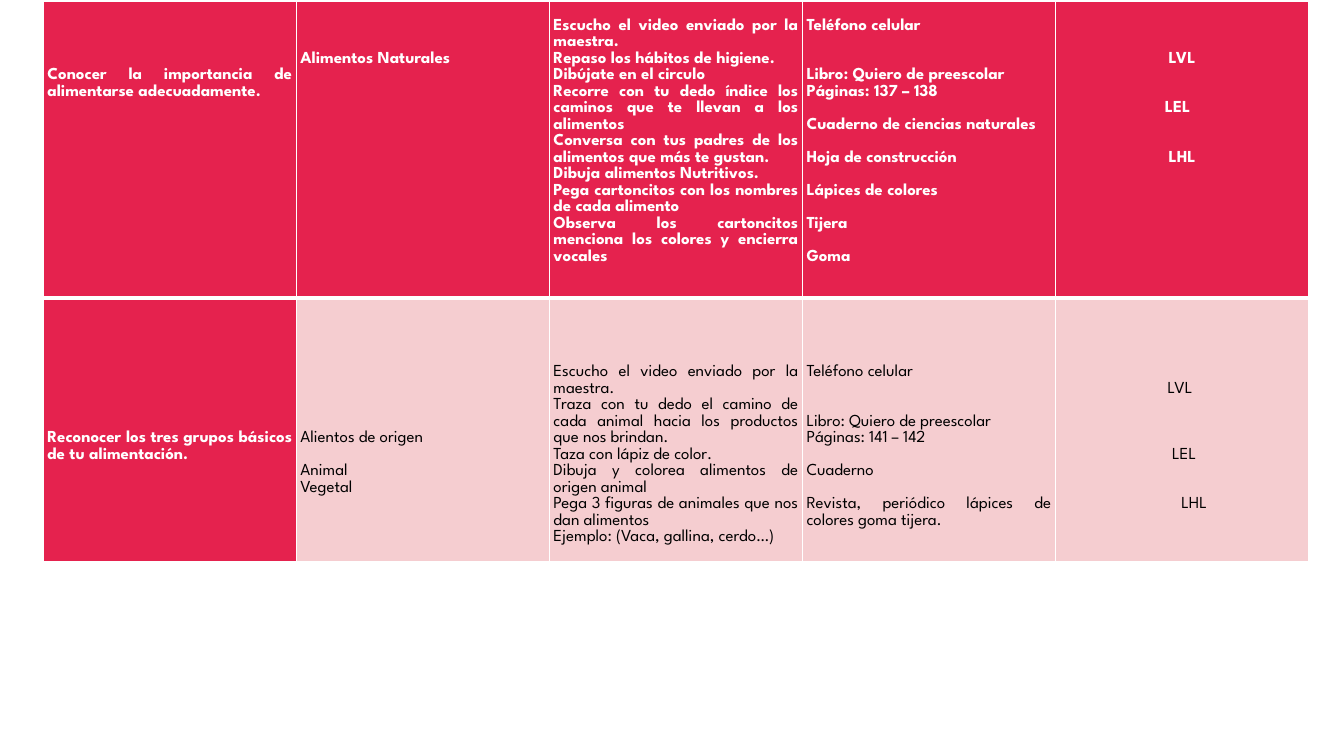
import lxml.etree
import pptx
import pptx.dml.color
import pptx.enum.text
import pptx.oxml.ns
import pptx.util

CRIMSON = pptx.dml.color.RGBColor(0xE5, 0x22, 0x4E)
PINK = pptx.dml.color.RGBColor(0xF5, 0xCD, 0xD0)
WHITE = pptx.dml.color.RGBColor(0xFF, 0xFF, 0xFF)
BLACK = pptx.dml.color.RGBColor(0x00, 0x00, 0x00)

LEFT = pptx.enum.text.PP_ALIGN.LEFT
CENTER = pptx.enum.text.PP_ALIGN.CENTER
JUSTIFY = pptx.enum.text.PP_ALIGN.JUSTIFY

SLIDE_WIDTH, SLIDE_HEIGHT = pptx.util.Inches(13.33), pptx.util.Inches(7.5)
LINE = pptx.util.Pt(11.78)  # height of one text line, the row unit of the grid
COLUMN = pptx.util.Inches(2.51)
ROW_LINES = (18, 16)
THIN, THICK = pptx.util.Pt(1), pptx.util.Pt(3)

# Each line of a cell: (empty lines above, text, optional format)
FIRST_LESSON = [
    [(4, "Conocer la importancia de alimentarse adecuadamente.")],
    [(3, "Alimentos Naturales")],
    [
        (1, "Escucho el video enviado por la maestra."),
        (0, "Repaso los hábitos de higiene."),
        (0, "Dibújate en el circulo"),
        (0, "Recorre con tu dedo índice los caminos que te llevan a los alimentos"),
        (0, "Conversa con tus padres de los alimentos que más te gustan."),
        (0, "Dibuja alimentos Nutritivos."),
        (0, "Pega cartoncitos con los nombres de cada alimento"),
        (0, "Observa los cartoncitos menciona los colores y encierra vocales"),
    ],
    [
        (1, "Teléfono celular"),
        (2, "Libro: Quiero de preescolar", {"align": LEFT}),
        (0, "Páginas: 137 – 138"),
        (1, "Cuaderno de ciencias naturales"),
        (1, "Hoja de construcción"),
        (1, "Lápices de colores"),
        (1, "Tijera"),
        (1, "Goma"),
    ],
    [(3, "LVL", {"indent": 0.09}), (2, "LEL"), (2, "LHL", {"indent": 0.09})],
]
SECOND_LESSON = [
    [(8, "Reconocer los tres grupos básicos de tu alimentación.")],
    [(8, "Alientos de origen"), (1, "Animal"), (0, "Vegetal")],
    [
        (4, "Escucho el video enviado por la maestra."),
        (0, "Traza con tu dedo el camino de cada animal hacia los productos que nos brindan."),
        (0, "Taza con lápiz de color."),
        (0, "Dibuja y colorea alimentos de origen animal"),
        (0, "Pega 3 figuras de animales que nos dan alimentos"),
        (0, "Ejemplo: (Vaca, gallina, cerdo…)"),
    ],
    [
        (4, "Teléfono celular"),
        (2, "Libro: Quiero de preescolar", {"align": LEFT}),
        (0, "Páginas: 141 – 142"),
        (1, "Cuaderno"),
        (1, "Revista, periódico lápices de colores goma tijera."),
    ],
    [
        (5, "LVL", {"indent": 0.05}),
        (3, "LEL", {"indent": 0.13}),
        (2, "LHL", {"indent": 0.33}),
    ],
]


def write_text(para, text, color=BLACK, bold=False, align=JUSTIFY, gap=0, indent=0):
    """Fill a paragraph; gap counts lines above it, indent is in inches."""
    if indent:
        para._p.get_or_add_pPr().set("marL", str(pptx.util.Inches(indent)))
    para.alignment = align
    para.line_spacing = 1.07
    para.space_before = gap * LINE
    span = para.add_run()
    span.text = text
    span.font.name = "League Spartan"
    span.font.size = pptx.util.Pt(12)
    span.font.bold = bold
    span.font.color.rgb = color


class LessonPage:
    """Holds the current slide and the style of its lesson grid."""

    def __init__(self, deck):
        self.page = deck.slides.add_slide(deck.slide_layouts[6])

    def add_borders(self, cell, widths):
        properties = cell._tc.get_or_add_tcPr()
        for side, width in widths.items():
            line = lxml.etree.SubElement(
                properties, pptx.oxml.ns.qn(f"a:ln{side}"), w=str(width))
            fill = lxml.etree.SubElement(line, pptx.oxml.ns.qn("a:solidFill"))
            lxml.etree.SubElement(fill, pptx.oxml.ns.qn("a:srgbClr"), val=str(WHITE))

    def fill_cell(self, cell, lines, strong, centered, widths):
        self.add_borders(cell, widths)
        cell.fill.solid()
        cell.fill.fore_color.rgb = CRIMSON if strong else PINK
        # Centred cells lean left so that paragraph indents can place each code
        cell.margin_left = pptx.util.Inches(0 if centered else 0.04)
        cell.margin_right = pptx.util.Inches(0.09 if centered else 0.04)
        cell.margin_top = lines[0][0] * LINE
        cell.margin_bottom = 0
        frame = cell.text_frame
        for index, (gap, text, *extra) in enumerate(lines):
            para = frame.add_paragraph() if index else frame.paragraphs[0]
            style = {
                "color": WHITE if strong else BLACK,
                "bold": strong,
                "align": CENTER if centered else JUSTIFY,
                "gap": gap if index else 0,
            }
            for change in extra:
                style.update(change)
            write_text(para, text, **style)

    def add_lessons(self, lessons):
        columns = len(lessons[0])
        frame = self.page.shapes.add_table(
            len(lessons), columns, pptx.util.Inches(0.43), pptx.util.Inches(0.01),
            columns * COLUMN, sum(ROW_LINES) * LINE)
        table = frame.table
        table.horz_banding = False
        for column in table.columns:
            column.width = COLUMN
        for row, lesson in enumerate(lessons):
            table.rows[row].height = ROW_LINES[row] * LINE
            widths = {"L": THIN, "R": THIN,
                      "T": THICK if row else THIN, "B": THIN if row else THICK}
            for column, lines in enumerate(lesson):
                self.fill_cell(table.cell(row, column), lines,
                               strong=row == 0 or column == 0,
                               centered=column == columns - 1, widths=widths)


def main():
    deck = pptx.Presentation()
    deck.slide_width, deck.slide_height = SLIDE_WIDTH, SLIDE_HEIGHT
    LessonPage(deck).add_lessons([FIRST_LESSON, SECOND_LESSON])
    deck.save("out.pptx")


if __name__ == "__main__":
    main()
